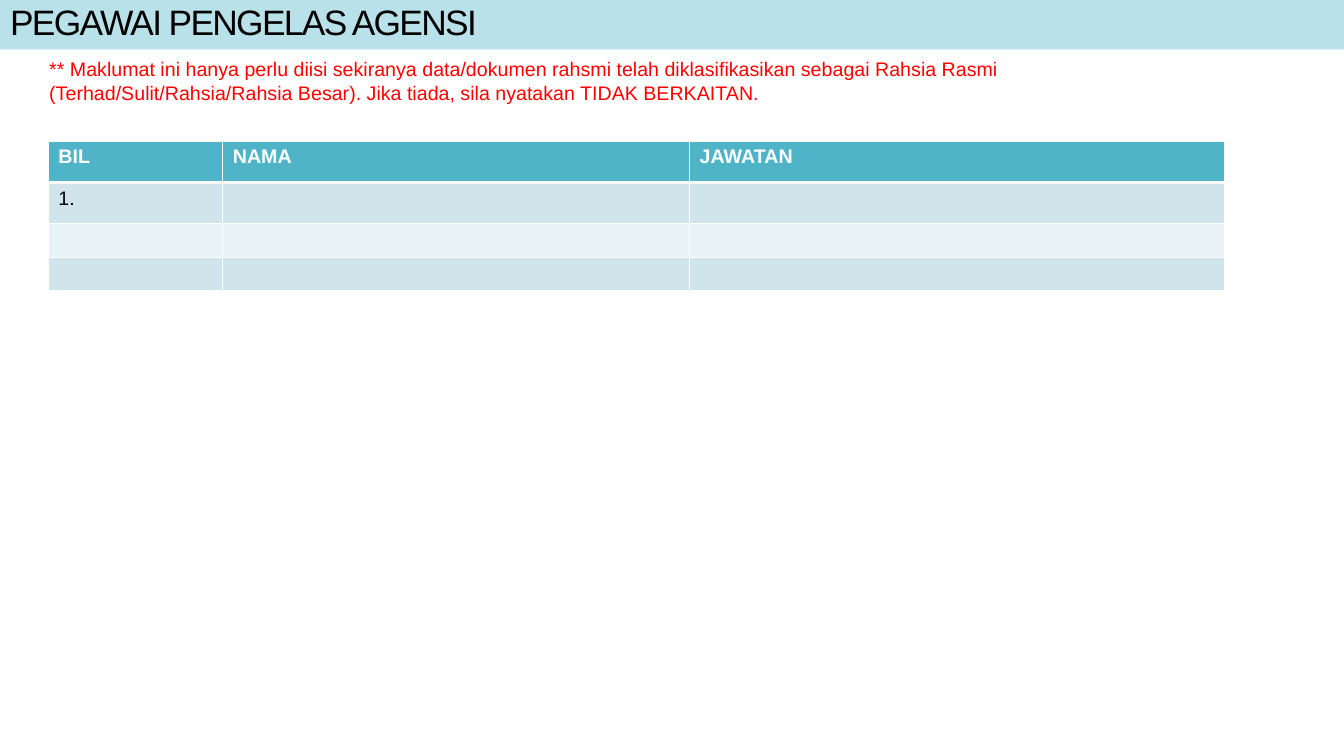
from dataclasses import dataclass
from lxml.etree import SubElement as Sub
from pptx import Presentation
from pptx.dml.color import RGBColor as RGB
from pptx.enum.text import MSO_ANCHOR as Anchor, MSO_AUTO_SIZE as Fit, PP_ALIGN as Align
from pptx.oxml.ns import qn
from pptx.util import Inches, Pt


@dataclass(frozen=True)
class Theme:
    font: str = "Arial"
    ink: str = "000000"
    white: str = "FFFFFF"
    alert: str = "FF0000"
    bar: str = "B9E1E9"
    head: str = "50B4C8"
    bands: tuple = ("D0E5EB", "E9F2F5")
    big: float = 25.2
    body: float = 14
    thin: float = 1
    thick: float = 3


class Deck:
    """Hold the theme and the current slide, and add each kind of element."""

    def __init__(self, theme):
        self.theme = theme
        self.prs = Presentation()
        self.prs.slide_width, self.prs.slide_height = Inches(13.33), Inches(7.5)
        self.slide = self.prs.slides.add_slide(self.prs.slide_layouts[5])

    def place(self, shape, box):
        for name, value in zip(("left", "top", "width", "height"), box):
            setattr(shape, name, Inches(value))

    def label(self, frame, text, size, color, bold=False):
        para = frame.paragraphs[0]
        para.alignment = Align.LEFT
        run = para.add_run()
        run.text = text
        form = {"name": self.theme.font, "size": Pt(size), "bold": bold}
        for name, value in form.items():
            setattr(run.font, name, value)
        run.font.color.rgb = RGB.from_string(color)
        return para, run

    def title(self, text, box):
        shape = self.slide.shapes.title
        self.place(shape, box)
        shape.fill.solid()
        shape.fill.fore_color.rgb = RGB.from_string(self.theme.bar)
        frame = shape.text_frame
        form = {"vertical_anchor": Anchor.MIDDLE, "auto_size": Fit.NONE, "word_wrap": True}
        for name, value in form.items():
            setattr(frame, name, value)
        para, run = self.label(frame, text, self.theme.big, self.theme.ink)
        para.line_spacing = 0.85
        run._r.get_or_add_rPr().set("spc", "-120")

    def note(self, text, box):
        frame = self.slide.shapes.add_textbox(*map(Inches, box)).text_frame
        frame.word_wrap = True
        frame.auto_size = Fit.SHAPE_TO_FIT_TEXT
        self.label(frame, text, self.theme.body, self.theme.alert)

    def edge(self, cell, side, width):
        line = Sub(cell._tc.get_or_add_tcPr(), qn(f"a:ln{side}"), w=str(Pt(width)))
        Sub(Sub(line, qn("a:solidFill")), qn("a:srgbClr"), val=self.theme.white)

    def cell(self, cell, text, row):
        look = self.theme
        wide = {"B": row == 0, "T": row == 1}
        for side in "LRTB":
            self.edge(cell, side, look.thick if wide.get(side) else look.thin)
        cell.fill.solid()
        tint = look.bands[(row - 1) % 2] if row else look.head
        cell.fill.fore_color.rgb = RGB.from_string(tint)
        if text:
            color = look.ink if row else look.white
            self.label(cell.text_frame, text, look.body, color, row == 0)
        else:
            para = cell.text_frame.paragraphs[0]
            Sub(para._p, qn("a:endParaRPr"), sz=str(Pt(look.body).centipoints))

    def table(self, data, left, top, cols, rows):
        box = left, top, sum(cols), sum(rows)
        grid = self.slide.shapes.add_table(len(rows), len(cols), *map(Inches, box)).table
        grid.first_row = grid.horz_banding = False
        for col, width in zip(grid.columns, cols):
            col.width = Inches(width)
        for r, (row, height) in enumerate(zip(grid.rows, rows)):
            row.height = Inches(height)
            for cell, text in zip(row.cells, data[r]):
                self.cell(cell, text, r)


def main():
    deck = Deck(Theme())
    deck.title("PEGAWAI PENGELAS AGENSI", (0, 0, 13.33, 0.49))
    deck.note(
        "** Maklumat ini hanya perlu diisi sekiranya data/dokumen rahsmi telah "
        "diklasifikasikan sebagai Rahsia Rasmi (Terhad/Sulit/Rahsia/Rahsia Besar). "
        "Jika tiada, sila nyatakan TIDAK BERKAITAN.",
        (0.39, 0.52, 11.67, 0.57),
    )
    blank = ("", "", "")
    data = [("BIL", "NAMA", "JAWATAN"), ("1.", "", ""), blank, blank]
    deck.table(data, 0.48, 1.4, (1.73, 4.63, 5.31), (0.41, 0.41, 0.33, 0.33))
    deck.prs.save("out.pptx")


if __name__ == "__main__":
    main()
